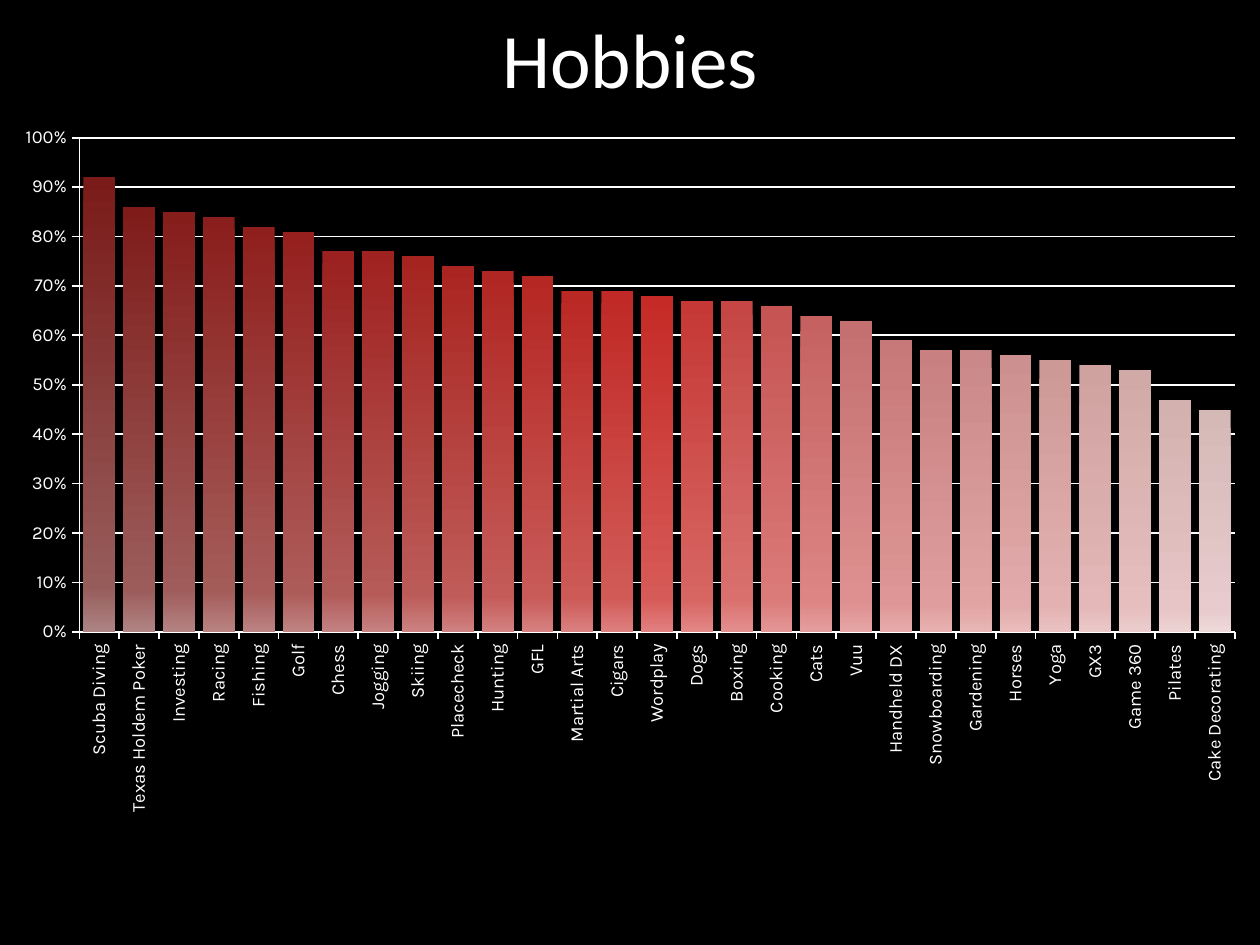
import copy

import pptx
import pptx.chart.data
import pptx.dml.color
import pptx.enum.chart
import pptx.enum.text
import pptx.oxml
import pptx.oxml.ns
import pptx.util
from pptx.util import Inches

# Content
TITLE = "Hobbies"
HOBBIES = [
    ("Scuba Diving", 0.92), ("Texas Holdem Poker", 0.86), ("Investing", 0.85),
    ("Racing", 0.84), ("Fishing", 0.82), ("Golf", 0.81), ("Chess", 0.77),
    ("Jogging", 0.77), ("Skiing", 0.76), ("Placecheck", 0.74), ("Hunting", 0.73),
    ("GFL", 0.72), ("Martial Arts", 0.69), ("Cigars", 0.69), ("Wordplay", 0.68),
    ("Dogs", 0.67), ("Boxing", 0.67), ("Cooking", 0.66), ("Cats", 0.64),
    ("Vuu", 0.63), ("Handheld DX", 0.59), ("Snowboarding", 0.57),
    ("Gardening", 0.57), ("Horses", 0.56), ("Yoga", 0.55), ("GX3", 0.54),
    ("Game 360", 0.53), ("Pilates", 0.47), ("Cake Decorating", 0.45),
]

THEME = {
    "background": "000000", "text": "FFFFFF",
    "title_font": "Calibri", "title_size": 44,
    "chart_font": "Karla", "chart_size": 18, "axis_size": 10.5,
    "line_width": 1,
    # Bar shades run between these bars; each has top, lower and foot colours
    "shades": [
        (0, ("7A1B19", "965C5A", "AC8483")),
        (14, ("C52A26", "D65A57", "E28080")),
        (19, ("C57070", "DD908F", "E6A5A5")),
        (28, ("D4B9B7", "E8CBCC", "EED9D9")),
    ],
    "stops": (0, 0.9, 1),
}
# Inner plot area as fractions of the chart frame
PLOT = {"x": 0.063, "y": 0.034, "w": 0.917, "h": 0.692}


def rgb(value):
    return pptx.dml.color.RGBColor.from_string(value)


def style_font(font, name, size):
    font.name = name
    font.size = pptx.util.Pt(size)
    font.bold = False
    font.color.rgb = rgb(THEME["text"])


def write_text(shape, text, *, font, size, align):
    frame = shape.text_frame
    frame.text = text
    frame.word_wrap = True
    frame.vertical_anchor = pptx.enum.text.MSO_ANCHOR.MIDDLE
    frame.paragraphs[0].alignment = align
    style_font(frame.paragraphs[0].runs[0].font, font, size)


def style_line(line):
    line.color.rgb = rgb(THEME["text"])
    line.width = pptx.util.Pt(THEME["line_width"])


def bar_shades(index):
    """Blend the nearest two shade anchors for one bar."""
    anchors = THEME["shades"]
    for (start, first), (end, last) in zip(anchors, anchors[1:]):
        if index <= end:
            share = (index - start) / (end - start)
            return [
                pptx.dml.color.RGBColor(*(round(a + (b - a) * share)
                                          for a, b in zip(rgb(one), rgb(two))))
                for one, two in zip(first, last)
            ]


def fill_bar(point, shades):
    fill = point.format.fill
    fill.gradient()
    fill.gradient_angle = 270
    stop_list = point.format._element.xpath(".//a:gsLst")[-1]
    for extra in list(stop_list)[1:]:
        stop_list.remove(extra)
    for _ in shades[1:]:
        stop_list.append(copy.deepcopy(stop_list[0]))
    for stop, shade, position in zip(fill.gradient_stops, shades, THEME["stops"]):
        stop.color.rgb = shade
        stop.position = position


def place_plot(chart):
    plot_area = chart._chartSpace.chart.plotArea
    for old in plot_area.xpath("c:layout"):
        plot_area.remove(old)
    modes = '<c:layoutTarget val="inner"/><c:xMode val="edge"/><c:yMode val="edge"/>'
    sizes = "".join(f'<c:{key} val="{value}"/>' for key, value in PLOT.items())
    plot_area.insert(0, pptx.oxml.parse_xml(
        f'<c:layout {pptx.oxml.ns.nsdecls("c")}><c:manualLayout>'
        f"{modes}{sizes}</c:manualLayout></c:layout>"))


def add_hobby_chart(slide):
    data = pptx.chart.data.CategoryChartData(number_format="0%")
    data.categories = [hobby for hobby, _ in HOBBIES]
    data.add_series("Series 1", [share for _, share in HOBBIES])
    chart = slide.shapes.add_chart(
        pptx.enum.chart.XL_CHART_TYPE.COLUMN_CLUSTERED,
        Inches(0), Inches(0.9), Inches(10), Inches(5.67), data).chart
    chart.has_legend = False
    chart.has_title = False
    style_font(chart.font, THEME["chart_font"], THEME["chart_size"])
    place_plot(chart)

    # Axes and gridlines
    for axis in (chart.category_axis, chart.value_axis):
        style_font(axis.tick_labels.font, THEME["chart_font"], THEME["axis_size"])
        axis.major_tick_mark = pptx.enum.chart.XL_TICK_MARK.OUTSIDE
        axis.minor_tick_mark = pptx.enum.chart.XL_TICK_MARK.NONE
        style_line(axis.format.line)
    label_body = chart.category_axis._element.xpath("c:txPr/a:bodyPr")[0]
    label_body.set("rot", "-5400000")
    label_body.set("vert", "horz")
    shares = chart.value_axis
    shares.minimum_scale, shares.maximum_scale, shares.major_unit = 0, 1, 0.1
    shares.tick_labels.number_format = "0%"
    shares.tick_labels.number_format_is_linked = False
    shares.has_major_gridlines = True
    style_line(shares.major_gridlines.format.line)

    # Bars
    bars = chart.plots[0]
    bars.gap_width = 25
    bars.vary_by_categories = False
    for index in range(len(HOBBIES)):
        fill_bar(bars.series[0].points[index], bar_shades(index))


def main():
    deck = pptx.Presentation()
    deck.slide_width, deck.slide_height = Inches(10), Inches(7.5)
    slide = deck.slides.add_slide(deck.slide_layouts[5])
    slide.background.fill.solid()
    slide.background.fill.fore_color.rgb = rgb(THEME["background"])

    # Title
    heading = slide.shapes.title
    heading.left, heading.top = Inches(0.5), Inches(0)
    heading.width, heading.height = Inches(9), Inches(0.92)
    write_text(heading, TITLE, font=THEME["title_font"], size=THEME["title_size"],
               align=pptx.enum.text.PP_ALIGN.CENTER)

    add_hobby_chart(slide)
    deck.save("out.pptx")


if __name__ == "__main__":
    main()
